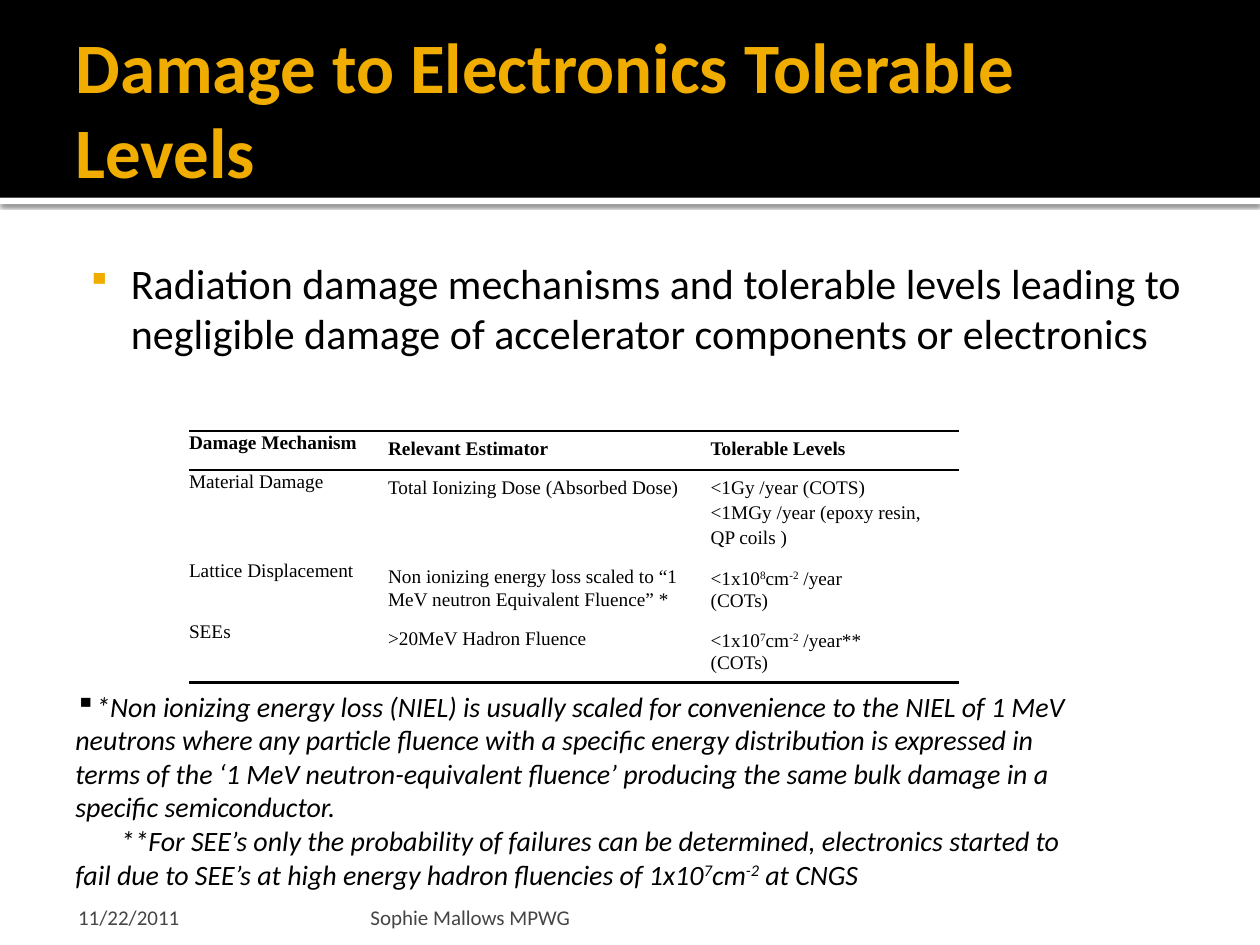
from lxml import etree
from pptx import Presentation
from pptx.dml.color import RGBColor
from pptx.enum import shapes, text
from pptx.oxml import ns
from pptx.util import Inches, Pt

BLACK = RGBColor(0x00, 0x00, 0x00)
WHITE = RGBColor(0xFF, 0xFF, 0xFF)
AMBER = RGBColor(0xF0, 0xAD, 0x00)
GREY = RGBColor(0x45, 0x45, 0x45)

# Text between carets is superscript.
TITLE = "Damage to Electronics Tolerable Levels"
INTRO = ("Radiation damage mechanisms and tolerable levels leading to "
         "negligible damage of accelerator components or electronics")
NIEL_NOTE = (
    "*Non ionizing energy loss (NIEL) is usually scaled for convenience to the NIEL "
    "of 1 MeV neutrons where any particle fluence with a specific energy distribution "
    "is expressed in terms of the ‘1 MeV neutron-equivalent fluence’ producing the same "
    "bulk damage in a specific semiconductor.")
SEE_NOTE = (
    "**For SEE’s only the probability of failures can be determined, electronics started "
    "to fail due to SEE’s at high energy hadron fluencies of 1x10^7^cm^-2^ at CNGS")
DATE = "11/22/2011"
AUTHOR = "Sophie Mallows MPWG"

TIGHT, LOOSE = Pt(13), 1.15
COLUMN_WIDTHS = [1.48, 2.56, 2.07]
ROW_HEIGHTS = [0.31, 0.67, 0.48, 0.48]
# Each cell is a list of (paragraph, line spacing).
DAMAGE_ROWS = [
    [[("Damage Mechanism", TIGHT)],
     [("Relevant Estimator", TIGHT)],
     [("Tolerable Levels", TIGHT)]],
    [[("Material Damage", TIGHT)],
     [("Total Ionizing Dose (Absorbed Dose)", TIGHT)],
     [("<1Gy /year (COTS)", TIGHT), ("<1MGy /year (epoxy resin, QP coils )", LOOSE)]],
    [[("Lattice Displacement", TIGHT)],
     [("Non ionizing energy loss scaled to “1 MeV neutron Equivalent Fluence” *", TIGHT)],
     [("<1x10^8^cm^-2^ /year", LOOSE), ("(COTs)", TIGHT)]],
    [[("SEEs", TIGHT)],
     [(">20MeV Hadron Fluence", TIGHT)],
     [("<1x10^7^cm^-2^ /year**", LOOSE), ("(COTs)", TIGHT)]],
]


def add_xml(parent, tag, **attributes):
    return etree.SubElement(parent, ns.qn(tag), attributes)


def add_paragraph(frame, content, size, color=BLACK, font="Calibri", bold=False,
                  italic=False, spacing=None, margin=0, indent=0,
                  bullet_color=None, bullet_percent=100):
    """Fill the frame's empty first paragraph, or append another one."""
    paragraph = frame.paragraphs[0]
    if paragraph.runs:
        paragraph = frame.add_paragraph()
    paragraph.alignment = text.PP_ALIGN.LEFT
    if spacing:
        paragraph.line_spacing = spacing
    properties = paragraph._p.get_or_add_pPr()
    properties.set("marL", str(Inches(margin)))
    properties.set("indent", str(Inches(indent)))
    if bullet_color is not None:
        add_xml(add_xml(properties, "a:buClr"), "a:srgbClr", val=str(bullet_color))
        add_xml(properties, "a:buSzPct", val=str(bullet_percent * 1000))
        add_xml(properties, "a:buChar", char="▪")
    for position, piece in enumerate(content.split("^")):
        run = paragraph.add_run()
        run.text = piece
        run.font.name, run.font.size = font, Pt(size)
        run.font.bold, run.font.italic = bold, italic
        run.font.color.rgb = color
        if position % 2:
            run._r.get_or_add_rPr().set("baseline", "30000")


def set_margins(target, left, top, right, bottom):
    target.margin_left, target.margin_top = Inches(left), Inches(top)
    target.margin_right, target.margin_bottom = Inches(right), Inches(bottom)


def add_frame(slide, box, margins=(0.1, 0.05, 0.1, 0.05), anchor=text.MSO_ANCHOR.TOP):
    frame = slide.shapes.add_textbox(*map(Inches, box)).text_frame
    frame.word_wrap = True
    frame.vertical_anchor = anchor
    set_margins(frame, *margins)
    return frame


def add_band(slide, top, height, color):
    band = slide.shapes.add_shape(shapes.MSO_SHAPE.RECTANGLE, 0, Inches(top),
                                  Inches(10), Inches(height))
    band.shadow.inherit = False
    band.fill.solid()
    band.fill.fore_color.rgb = color
    band.line.fill.background()
    return band


def add_soft_shadow(band):
    effects = band._element.spPr.find(ns.qn("a:effectLst"))
    shadow = add_xml(effects, "a:outerShdw", blurRad=str(Pt(2.5)), dist=str(Pt(0.8)),
                     dir="5400000", algn="t", rotWithShape="0")
    color = add_xml(shadow, "a:srgbClr", val=str(BLACK))
    add_xml(color, "a:alpha", val="60000")


def set_rules(cell, top, bottom):
    """Draw the cell's horizontal rules, widths in points; 0 means none."""
    properties = cell._tc.get_or_add_tcPr()
    sides = [("a:lnL", 0), ("a:lnR", 0), ("a:lnT", top), ("a:lnB", bottom)]
    for position, (side, width) in enumerate(sides):
        rule = etree.Element(ns.qn(side), w=str(Pt(width)))
        if width:
            add_xml(add_xml(rule, "a:solidFill"), "a:srgbClr", val=str(BLACK))
        else:
            add_xml(rule, "a:noFill")
        properties.insert(position, rule)


def add_damage_table(slide):
    table = slide.shapes.add_table(
        len(ROW_HEIGHTS), len(COLUMN_WIDTHS), Inches(1.5), Inches(3.42),
        Inches(sum(COLUMN_WIDTHS)), Inches(sum(ROW_HEIGHTS))).table
    table.first_row = table.horz_banding = False
    for column, width in zip(table.columns, COLUMN_WIDTHS):
        column.width = Inches(width)
    for row, height in zip(table.rows, ROW_HEIGHTS):
        row.height = Inches(height)
    rules = [1.5, 1, 0, 0, 1.5]
    for r, row in enumerate(DAMAGE_ROWS):
        for c, paragraphs in enumerate(row):
            cell = table.cell(r, c)
            cell.fill.background()
            set_rules(cell, rules[r], rules[r + 1])
            if c == 0:
                set_margins(cell, 0, 0, 0, 0)
            for content, spacing in paragraphs:
                add_paragraph(cell.text_frame, content, 11, font="Times New Roman",
                              bold=r == 0, spacing=spacing)


def main():
    deck = Presentation()
    deck.slide_width, deck.slide_height = Inches(10), Inches(7.5)
    slide = deck.slides.add_slide(deck.slide_layouts[6])

    add_soft_shadow(add_band(slide, 1.57, 0.05, WHITE))
    add_band(slide, 0, 1.57, BLACK)
    title = add_frame(slide, (0.5, 0.17, 9, 1.37), (0.1, 0.05, 0.05, 0.05),
                      text.MSO_ANCHOR.MIDDLE)
    add_paragraph(title, TITLE, 40.5, AMBER, bold=True)

    intro = add_frame(slide, (0.5, 1.94, 9, 5.06), (0.06, 0.1, 0.1, 0.05))
    add_paragraph(intro, INTRO, 24, margin=0.48, indent=-0.35,
                  bullet_color=AMBER, bullet_percent=80)
    add_damage_table(slide)

    notes = add_frame(slide, (0.5, 5.42, 8.17, 1.72))
    add_paragraph(notes, NIEL_NOTE, 16, italic=True, bullet_color=BLACK)
    add_paragraph(notes, SEE_NOTE, 16, italic=True, indent=0.36)

    for content, left, width, inset in [(DATE, 0.5, 2.33, 0.12),
                                        (AUTHOR, 2.89, 6.02, 0.05)]:
        footer = add_frame(slide, (left, 7.08, width, 0.3), (inset, 0.05, 0.05, 0),
                           text.MSO_ANCHOR.BOTTOM)
        add_paragraph(footer, content, 12, GREY)

    deck.save("out.pptx")


if __name__ == "__main__":
    main()
